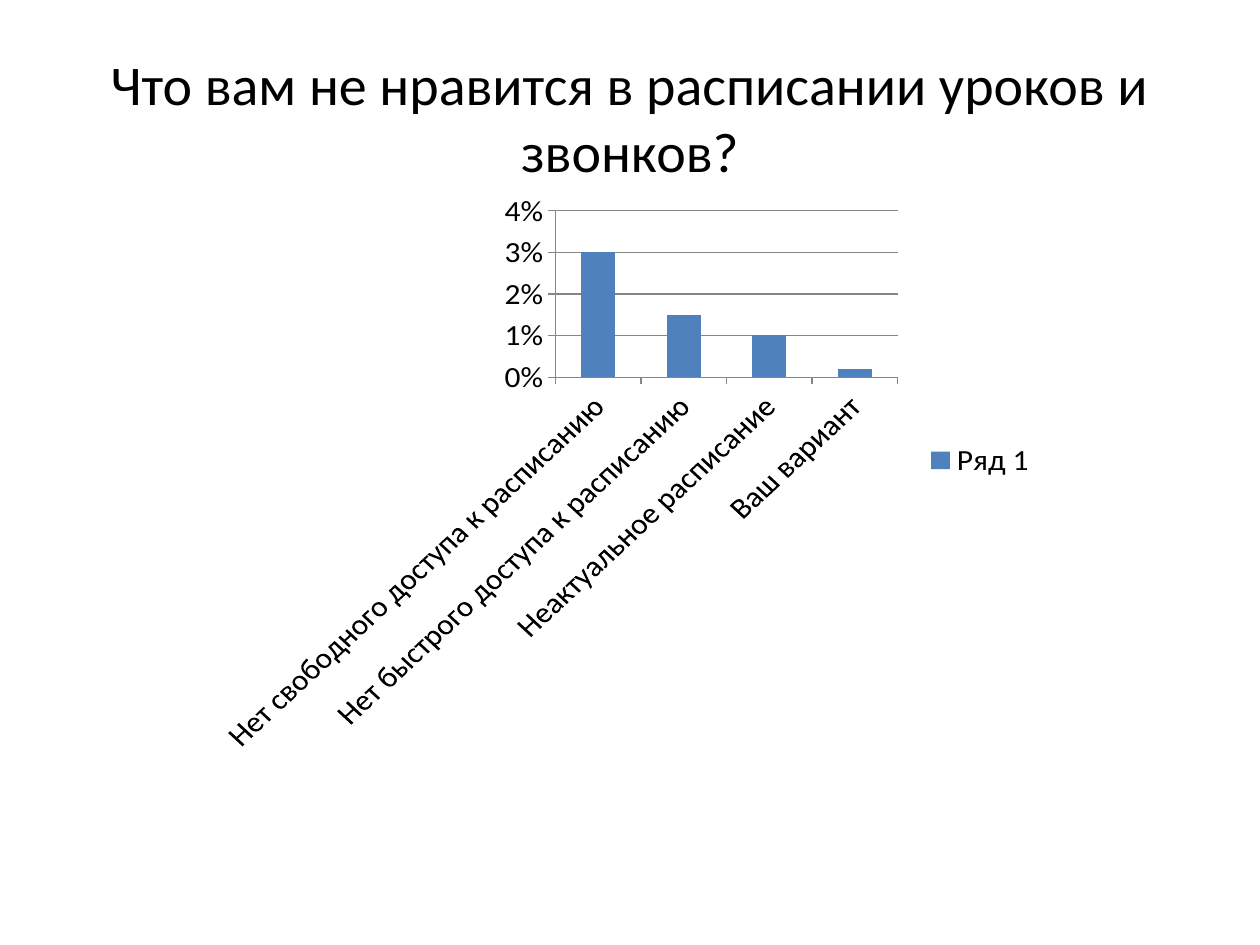
from pptx import Presentation
from pptx.chart.data import CategoryChartData
from pptx.dml.color import RGBColor
from pptx.enum.chart import XL_CHART_TYPE, XL_LEGEND_POSITION, XL_TICK_MARK
from pptx.enum.text import MSO_ANCHOR, PP_ALIGN
from pptx.util import Cm, Pt


def color(value):
    return RGBColor.from_string(value)


def apply(target, formats):
    for name, value in formats.items():
        setattr(target, name, value)


class SlideBuilder:
    font = "Calibri"
    text = "000000"
    grid = "868686"
    bar = "4F81BD"

    def __init__(self, slide):
        self.slide = slide

    def style_font(self, font, size):
        apply(font, {"name": self.font, "size": Pt(size), "bold": False})
        font.color.rgb = color(self.text)

    def style_line(self, line):
        line.color.rgb = color(self.grid)
        line.width = Pt(0.75)

    def title(self, text, box, size):
        tf = self.slide.shapes.add_textbox(*map(Cm, box)).text_frame
        apply(tf, {"word_wrap": True, "vertical_anchor": MSO_ANCHOR.MIDDLE})
        p = tf.paragraphs[0]
        p.alignment = PP_ALIGN.CENTER
        r = p.add_run()
        r.text = text
        self.style_font(r.font, size)

    def column_chart(self, series_name, values, box, size):
        data = CategoryChartData(number_format="0.0%")
        data.categories = list(values)
        data.add_series(series_name, list(values.values()))
        chart = self.slide.shapes.add_chart(
            XL_CHART_TYPE.COLUMN_CLUSTERED, *map(Cm, box), data).chart
        apply(chart, {"has_title": False, "has_legend": True})
        self.style_font(chart.font, size)
        apply(chart.legend, {"position": XL_LEGEND_POSITION.RIGHT,
                             "include_in_layout": False})

        # Columns
        plot = chart.plots[0]
        apply(plot, {"gap_width": 150, "vary_by_categories": False})
        fill = plot.series[0].format.fill
        fill.solid()
        fill.fore_color.rgb = color(self.bar)

        # Axes and gridlines
        for axis in (chart.category_axis, chart.value_axis):
            apply(axis, {"major_tick_mark": XL_TICK_MARK.OUTSIDE,
                         "minor_tick_mark": XL_TICK_MARK.NONE})
            self.style_line(axis.format.line)
        axis = chart.value_axis
        apply(axis, {"minimum_scale": 0, "maximum_scale": 0.04,
                     "major_unit": 0.01, "has_major_gridlines": True})
        apply(axis.tick_labels, {"number_format": "0%",
                                 "number_format_is_linked": False})
        self.style_line(axis.major_gridlines.format.line)


def main():
    prs = Presentation()
    apply(prs, {"slide_width": Cm(25.4), "slide_height": Cm(19.05)})
    s = SlideBuilder(prs.slides.add_slide(prs.slide_layouts[6]))

    # Question
    s.title("Что вам не нравится в расписании уроков и звонков?",
            (1.27, 0.76, 22.86, 3.18), 32)

    # Answers
    answers = {
        "Нет свободного доступа к расписанию": 0.03,
        "Нет быстрого доступа к расписанию": 0.015,
        "Неактуальное расписание": 0.01,
        "Ваш вариант": 0.002,
    }
    s.column_chart("Ряд 1", answers, (4.23, 3.89, 16.93, 11.29), 18)

    prs.save("out.pptx")


if __name__ == "__main__":
    main()
